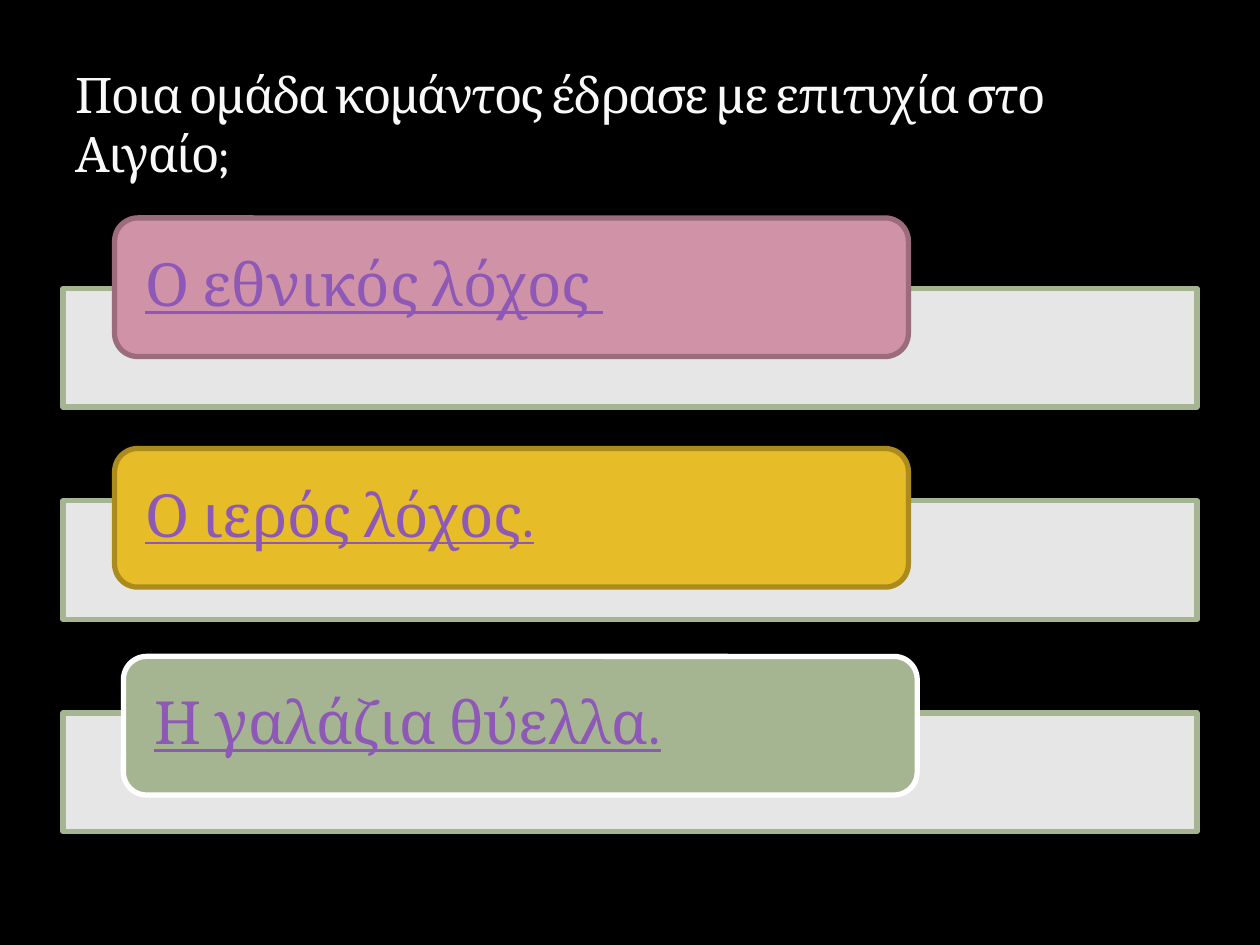
from lxml import etree
from pptx import Presentation
from pptx.dml.color import RGBColor
from pptx.enum.shapes import MSO_SHAPE
from pptx.enum.text import MSO_ANCHOR, PP_ALIGN
from pptx.oxml.ns import qn
from pptx.util import Inches, Pt

RECT = MSO_SHAPE.RECTANGLE
ROUNDED = MSO_SHAPE.ROUNDED_RECTANGLE
MIDDLE = MSO_ANCHOR.MIDDLE
BOTTOM = MSO_ANCHOR.BOTTOM
LEFT = PP_ALIGN.LEFT

BLACK = RGBColor(0x00, 0x00, 0x00)
WHITE = RGBColor(0xFF, 0xFF, 0xFF)
TITLE_WHITE = RGBColor(0xF9, 0xF9, 0xF9)
PURPLE = RGBColor(0x8E, 0x58, 0xB6)
GREEN = RGBColor(0xA5, 0xB5, 0x92)
PINK = RGBColor(0xD0, 0x92, 0xA7)
DARK_PINK = RGBColor(0x9A, 0x6C, 0x7C)
GOLD = RGBColor(0xE7, 0xBC, 0x29)
DARK_GOLD = RGBColor(0xAB, 0x8B, 0x1E)

FONT = "Cambria"
MARGIN, CONTENT_W = 0.5, 9
BAR_TOP, BAR_PITCH, BAR_H = 2.29, 1.685, 0.94
ANSWER_W, ANSWER_H = 0.7 * CONTENT_W, 1.1

ANSWERS = [
    ("Ο εθνικός λόχος ", 0.91, 1.73, PINK, DARK_PINK),
    ("Ο ιερός λόχος.", 0.91, 3.56, GOLD, DARK_GOLD),
    ("Η γαλάζια θύελλα.", 0.98, 5.21, GREEN, WHITE),
]


def add_box(slide, kind, left, top, width, height, fill, line):
    sp = slide.shapes.add_shape(
        kind, Inches(left), Inches(top), Inches(width), Inches(height))
    sp.shadow.inherit = False
    sp.fill.solid()
    sp.fill.fore_color.rgb = fill
    sp.line.color.rgb = line
    sp.line.width = Pt(3)
    return sp


def set_opacity(sp, percent):
    color = sp.fill._xPr.find(qn("a:solidFill"))[0]
    etree.SubElement(color, qn("a:alpha"), val=str(percent * 1000))


def style_text(p, size, color):
    p.alignment = LEFT
    p.font.name = FONT
    p.font.size = Pt(size)
    p.font.color.rgb = color


def add_title(slide, text):
    title = slide.shapes.title
    title.left, title.top = Inches(MARGIN), Inches(0.29)
    title.width, title.height = Inches(CONTENT_W), Inches(1.21)
    tf = title.text_frame
    tf.text = text
    tf.word_wrap = True
    tf.vertical_anchor = BOTTOM
    p = tf.paragraphs[0]
    style_text(p, 28, TITLE_WHITE)
    p.runs[0].font._element.set("spc", "-100")


def add_bar(slide, row):
    top = BAR_TOP + row * BAR_PITCH
    bar = add_box(slide, RECT, MARGIN, top, CONTENT_W, BAR_H, WHITE, GREEN)
    set_opacity(bar, 90)


def add_answer(slide, text, left, top, fill, line):
    sp = add_box(slide, ROUNDED, left, top, ANSWER_W, ANSWER_H, fill, line)
    tf = sp.text_frame
    tf.word_wrap = True
    tf.vertical_anchor = MIDDLE
    tf.margin_left = tf.margin_right = Inches(0.19)
    tf.margin_top = tf.margin_bottom = 0
    tf.text = text
    p = tf.paragraphs[0]
    style_text(p, 34, PURPLE)
    p.font.underline = True
    p.line_spacing = 0.9


def main():
    prs = Presentation()
    prs.slide_width, prs.slide_height = Inches(10), Inches(7.5)
    slide = prs.slides.add_slide(prs.slide_layouts[5])
    slide.background.fill.solid()
    slide.background.fill.fore_color.rgb = BLACK
    for row, answer in enumerate(ANSWERS):
        add_bar(slide, row)
        add_answer(slide, *answer)
    add_title(slide, "Ποια ομάδα κομάντος έδρασε με επιτυχία στο Αιγαίο;")
    prs.save("out.pptx")


if __name__ == "__main__":
    main()
